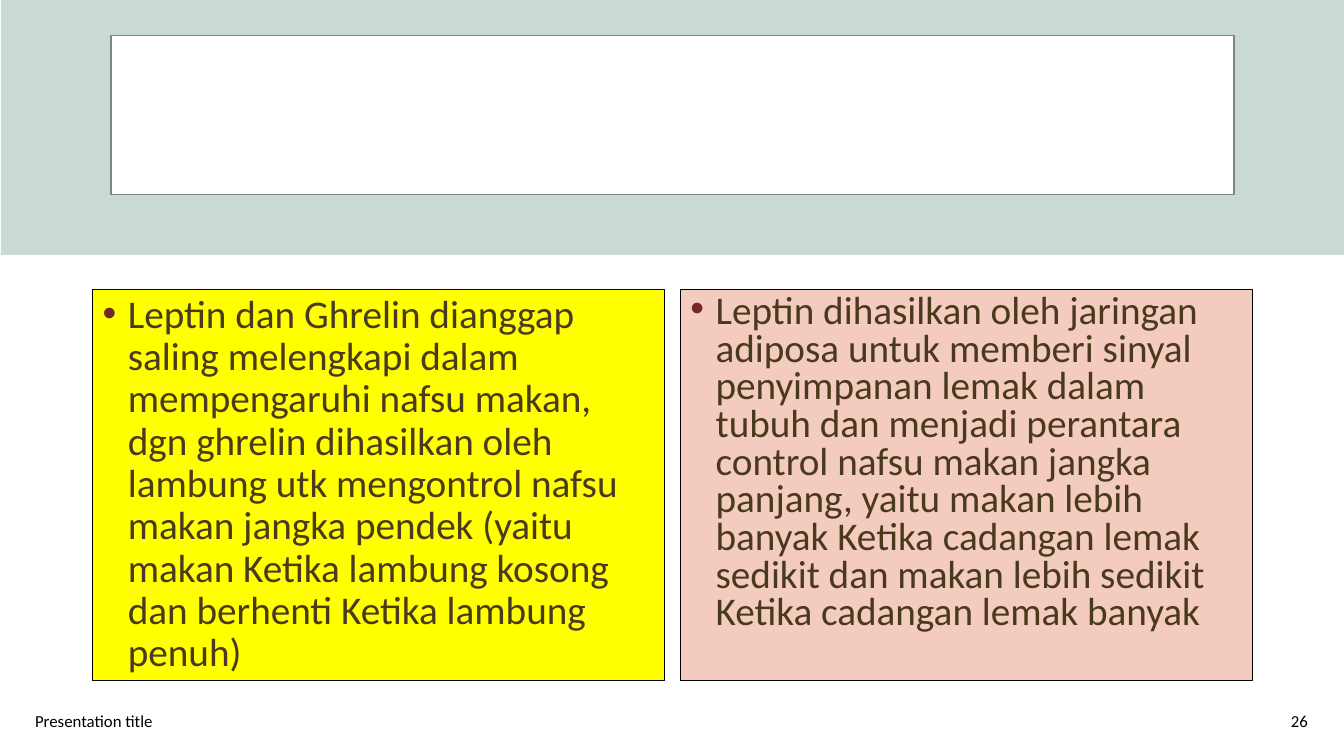
"""Builds the slide comparing leptin and ghrelin."""
from lxml.etree import SubElement
from pptx import Presentation
from pptx.dml.color import RGBColor
from pptx.enum.shapes import MSO_SHAPE
from pptx.enum.text import MSO_ANCHOR, PP_ALIGN
from pptx.oxml.ns import qn
from pptx.util import Inches, Pt

COLORS = {
    "band": "CAD8D6", "white": "FFFFFF", "frame": "7E8679", "black": "000000",
    "yellow": "FFFF00", "pink": "F4CBBF", "bullet": "73292A", "brown": "4A3A1C",
}


def color(name):
    return RGBColor.from_string(COLORS[name])


def write(shape, text, size=12, ink="black", align=PP_ALIGN.LEFT,
          anchor=MSO_ANCHOR.MIDDLE, space=None, bullet=False):
    frame = shape.text_frame
    frame.word_wrap = True
    frame.vertical_anchor = anchor
    para = frame.paragraphs[0]
    para.text = text
    para.alignment = align
    if bullet:
        props = para._p.get_or_add_pPr()
        props.set("marL", str(Inches(0.25)))
        props.set("indent", str(Inches(-0.25)))
        tint = SubElement(props, qn("a:buClr"))
        SubElement(tint, qn("a:srgbClr"), val=COLORS["bullet"])
        SubElement(props, qn("a:buFont"), typeface="Arial")
        SubElement(props, qn("a:buChar"), char="•")
    if space:
        para.line_spacing = space
    para.font.name = "Calibri"
    para.font.size = Pt(size)
    para.font.color.rgb = color(ink)


deck = Presentation()
deck.slide_width, deck.slide_height = Inches(13.33), Inches(7.5)
slide = deck.slides.add_slide(deck.slide_layouts[6])

left = ("Leptin dan Ghrelin dianggap saling melengkapi dalam mempengaruhi nafsu "
        "makan, dgn ghrelin dihasilkan oleh lambung utk mengontrol nafsu makan "
        "jangka pendek (yaitu makan Ketika lambung kosong dan berhenti Ketika "
        "lambung penuh)")
right = ("Leptin dihasilkan oleh jaringan adiposa untuk memberi sinyal penyimpanan "
         "lemak dalam tubuh dan menjadi perantara control nafsu makan jangka "
         "panjang, yaitu makan lebih banyak Ketika cadangan lemak sedikit dan "
         "makan lebih sedikit Ketika cadangan lemak banyak")

boxes = [
    ((0.01, 0, 13.33, 2.53), "band", None, 0, None, None),
    ((1.1, 0.35, 11.14, 1.58), "white", "frame", 1, None, None),
    ((0.92, 2.87, 5.67, 3.88), "yellow", "black", 0.75, left, 0.9),
    ((6.75, 2.87, 5.67, 3.88), "pink", "black", 0.75, right, 0.8),
]
for place, fill, edge, width, text, space in boxes:
    box = slide.shapes.add_shape(MSO_SHAPE.RECTANGLE, *map(Inches, place))
    box.shadow.inherit = False
    box.fill.solid()
    box.fill.fore_color.rgb = color(fill)
    if edge:
        box.line.color.rgb = color(edge)
        box.line.width = Pt(width)
    else:
        box.line.fill.background()
    if text:
        write(box, text, size=28, ink="brown", anchor=MSO_ANCHOR.TOP,
              space=space, bullet=True)

for x, width, text, align in [
    (0.25, 4.5, "Presentation title", PP_ALIGN.LEFT),
    (10.07, 3, "26", PP_ALIGN.RIGHT),
]:
    foot = slide.shapes.add_textbox(Inches(x), Inches(6.95), Inches(width), Inches(0.4))
    write(foot, text, align=align)

deck.save("out.pptx")
